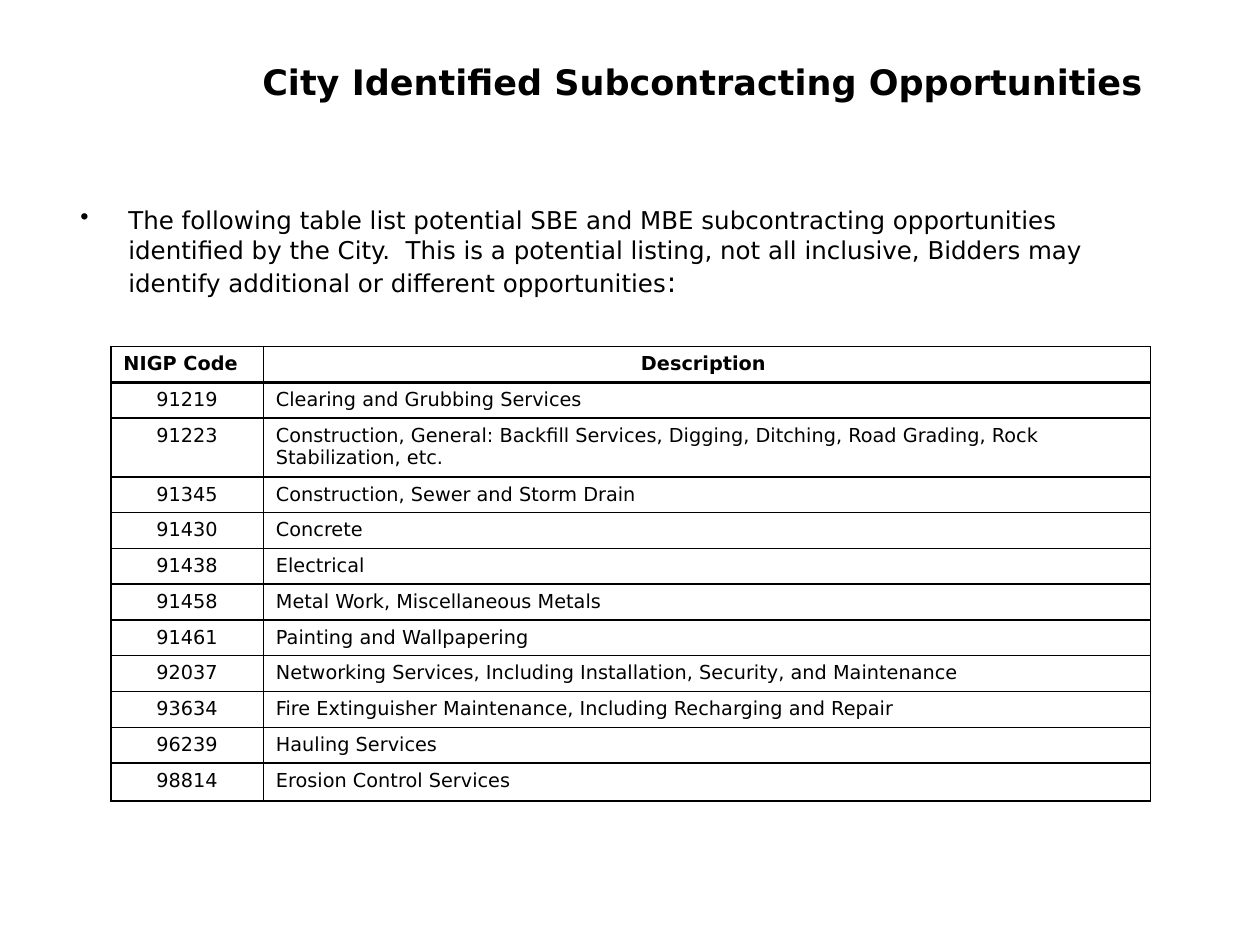
from dataclasses import dataclass

from lxml import etree
from pptx import Presentation
from pptx.dml.color import RGBColor
from pptx.enum.text import MSO_ANCHOR, PP_ALIGN
from pptx.oxml.ns import qn
from pptx.util import Inches, Pt

CENTER, LEFT = PP_ALIGN.CENTER, PP_ALIGN.LEFT
MIDDLE, TOP = MSO_ANCHOR.MIDDLE, MSO_ANCHOR.TOP
BLANK_LAYOUT = 6


@dataclass(frozen=True)
class Theme:
    font: str = "DejaVu Sans"
    ink: str = "000000"
    paper: str = "FFFFFF"
    title: int = 20
    body: int = 14
    colon: int = 16
    table: int = 11
    rule: int = 1
    header_rule: int = 2


THEME = Theme()
TITLE = "City Identified Subcontracting Opportunities "
INTRO = (
    "The following table list potential SBE and MBE subcontracting opportunities "
    "identified by the City.  This is a potential listing, not all inclusive, "
    "Bidders may identify additional or different opportunities"
)
HEADER = ("NIGP Code", "Description ")
OPPORTUNITIES = [
    ("91219", "Clearing and Grubbing Services"),
    ("91223", "Construction, General: Backfill Services, Digging, Ditching, "
              "Road Grading, Rock Stabilization, etc."),
    ("91345", "Construction, Sewer and Storm Drain"),
    ("91430", "Concrete"),
    ("91438", "Electrical"),
    ("91458", "Metal Work, Miscellaneous Metals"),
    ("91461", "Painting and Wallpapering"),
    ("92037", "Networking Services, Including Installation, Security, and Maintenance"),
    ("93634", "Fire Extinguisher Maintenance, Including Recharging and Repair"),
    ("96239", "Hauling Services"),
    ("98814", "Erosion Control Services"),
]
COLUMN_WIDTHS = (1.21, 7.04)
ROW_HEIGHT = 0.28
LAST_ROW_HEIGHT = 0.3


def add_run(paragraph, text, size, bold=False):
    run = paragraph.add_run()
    run.text = text
    run.font.name = THEME.font
    run.font.size = Pt(size)
    run.font.bold = bold
    run.font.color.rgb = RGBColor.from_string(THEME.ink)


def add_text_frame(slide, left, top, width, height, anchor):
    frame = slide.shapes.add_textbox(*map(Inches, (left, top, width, height))).text_frame
    frame.word_wrap = True
    frame.vertical_anchor = anchor
    return frame


def set_bullet(paragraph, indent):
    properties = paragraph._p.get_or_add_pPr()
    properties.set("marL", str(Inches(indent)))
    properties.set("indent", str(-Inches(indent)))
    etree.SubElement(properties, qn("a:buChar"), char="•")


def set_borders(cell, bottom):
    """Draw all four sides, with the bottom in its own width."""
    properties = cell._tc.get_or_add_tcPr()
    widths = {"lnL": THEME.rule, "lnR": THEME.rule, "lnT": THEME.rule, "lnB": bottom}
    for position, (side, width) in enumerate(widths.items()):
        line = etree.Element(qn(f"a:{side}"), w=str(Pt(width)))
        fill = etree.SubElement(line, qn("a:solidFill"))
        etree.SubElement(fill, qn("a:srgbClr"), val=THEME.ink)
        properties.insert(position, line)


def fill_cell(cell, text, align, is_header):
    cell.fill.solid()
    cell.fill.fore_color.rgb = RGBColor.from_string(THEME.paper)
    set_borders(cell, THEME.header_rule if is_header else THEME.rule)
    paragraph = cell.text_frame.paragraphs[0]
    paragraph.alignment = align
    add_run(paragraph, text, THEME.table, bold=is_header)


def add_title(slide):
    paragraph = add_text_frame(slide, 1.75, 0.3, 7.75, 0.7, MIDDLE).paragraphs[0]
    paragraph.alignment = CENTER
    add_run(paragraph, TITLE, THEME.title, bold=True)


def add_intro(slide):
    paragraph = add_text_frame(slide, 0.54, 1.58, 8.92, 0.84, TOP).paragraphs[0]
    set_bullet(paragraph, 0.38)
    paragraph.space_after = Pt(6)
    add_run(paragraph, INTRO, THEME.body)
    add_run(paragraph, ":", THEME.colon)


def add_opportunity_table(slide):
    entries = [HEADER, *OPPORTUNITIES]
    heights = [ROW_HEIGHT] * len(OPPORTUNITIES) + [LAST_ROW_HEIGHT]
    table = slide.shapes.add_table(
        len(entries), len(HEADER), Inches(0.88), Inches(2.75),
        Inches(sum(COLUMN_WIDTHS)), Inches(sum(heights)),
    ).table
    table.horz_banding = False
    for column, width in zip(table.columns, COLUMN_WIDTHS):
        column.width = Inches(width)
    for index, (row, height, entry) in enumerate(zip(table.rows, heights, entries)):
        is_header = index == 0
        row.height = Inches(height)
        alignments = (LEFT, CENTER) if is_header else (CENTER, LEFT)
        for cell, text, align in zip(row.cells, entry, alignments):
            fill_cell(cell, text, align, is_header)


def main():
    presentation = Presentation()
    presentation.slide_width, presentation.slide_height = Inches(10), Inches(7.5)
    slide = presentation.slides.add_slide(presentation.slide_layouts[BLANK_LAYOUT])
    add_title(slide)
    add_intro(slide)
    add_opportunity_table(slide)
    presentation.save("out.pptx")


if __name__ == "__main__":
    main()
